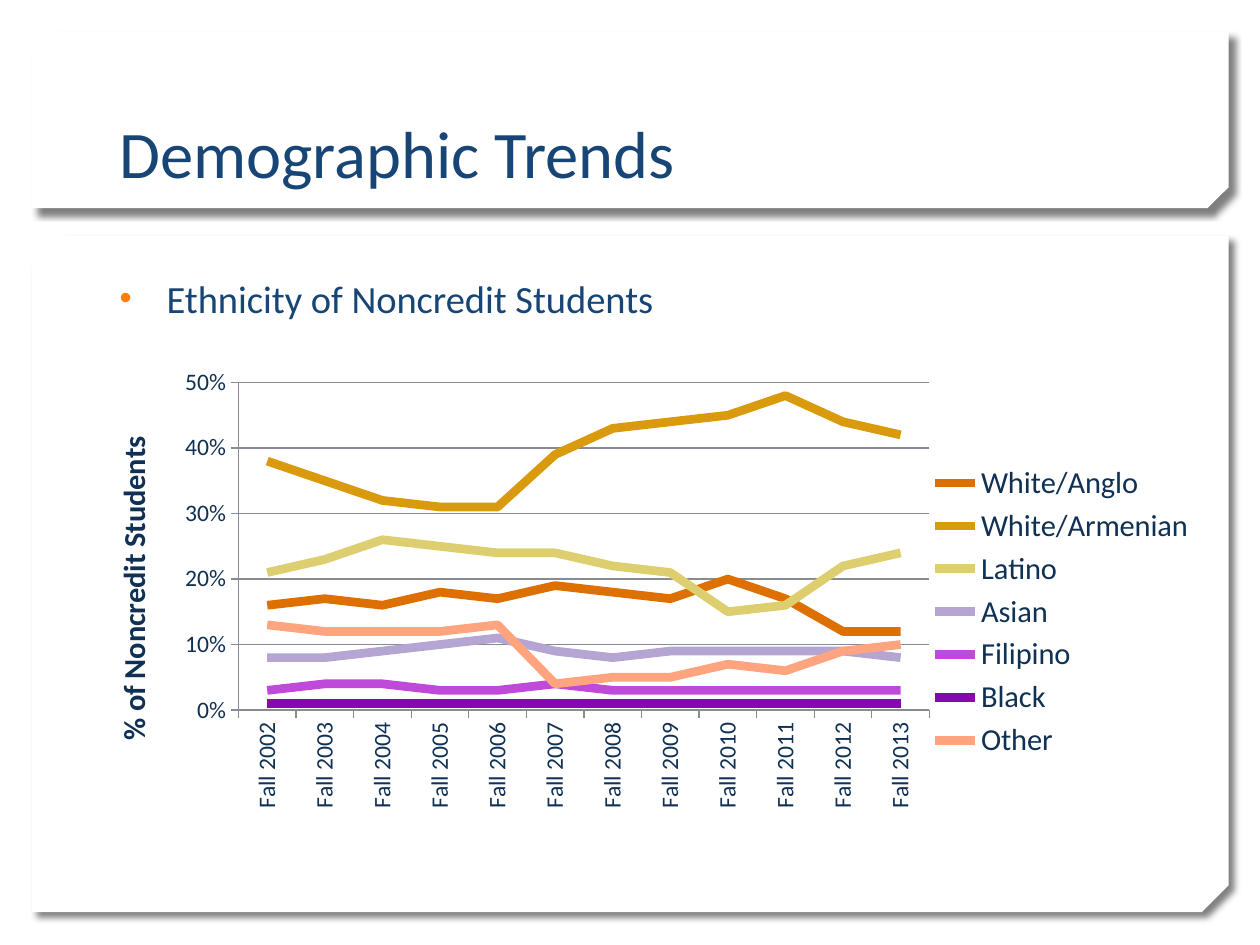
from lxml.etree import SubElement
from pptx import Presentation
from pptx.chart.data import CategoryChartData
from pptx.dml.color import RGBColor
from pptx.enum.chart import XL_CHART_TYPE as ChartType, XL_LEGEND_POSITION as LegendPosition
from pptx.enum.chart import XL_TICK_MARK as TickMark
from pptx.enum.shapes import MSO_SHAPE as Shape
from pptx.enum.text import MSO_ANCHOR as Anchor
from pptx.oxml import parse_xml
from pptx.oxml.ns import nsdecls, qn
from pptx.util import Cm, Pt

FONT = "Calibri"
WHITE = RGBColor(0xFF, 0xFF, 0xFF)
BLUE = RGBColor(0x17, 0x45, 0x76)
NAVY = RGBColor(0x10, 0x31, 0x54)
GRAY = RGBColor(0x87, 0x8B, 0x94)
BULLET_ORANGE = RGBColor(0xFF, 0x7F, 0x01)
ORANGE = RGBColor(0xDD, 0x70, 0x00)
GOLD = RGBColor(0xD9, 0x9B, 0x0D)
YELLOW = RGBColor(0xDD, 0xCF, 0x70)
LILAC = RGBColor(0xB5, 0xA5, 0xD3)
MAGENTA = RGBColor(0xBF, 0x49, 0xD8)
PURPLE = RGBColor(0x85, 0x06, 0xB2)
SALMON = RGBColor(0xFF, 0xA4, 0x7F)

TERMS = [f"Fall {year}" for year in range(2002, 2014)]
GROUPS = [
    ("White/Anglo", ORANGE, [16, 17, 16, 18, 17, 19, 18, 17, 20, 17, 12, 12]),
    ("White/Armenian", GOLD, [38, 35, 32, 31, 31, 39, 43, 44, 45, 48, 44, 42]),
    ("Latino", YELLOW, [21, 23, 26, 25, 24, 24, 22, 21, 15, 16, 22, 24]),
    ("Asian", LILAC, [8, 8, 9, 10, 11, 9, 8, 9, 9, 9, 9, 8]),
    ("Filipino", MAGENTA, [3, 4, 4, 3, 3, 4, 3, 3, 3, 3, 3, 3]),
    ("Black", PURPLE, [1] * 12),
    ("Other", SALMON, [13, 12, 12, 12, 13, 4, 5, 5, 7, 6, 9, 10]),
]
PLOT_LAYOUT = {"x": 0.155, "y": 0.049, "w": 0.602, "h": 0.645}


def style_font(font, size, color, bold=False):
    font.name = FONT
    font.size = Pt(size)
    font.color.rgb = color
    font.bold = bold


def add_panel(page, top, height, snip):
    panel = page.shapes.add_shape(
        Shape.SNIP_2_DIAG_RECTANGLE, Cm(0.64), Cm(top), Cm(24.13), Cm(height))
    panel.adjustments[0] = 0
    panel.adjustments[1] = snip
    panel.fill.solid()
    panel.fill.fore_color.rgb = WHITE
    panel.line.fill.background()
    properties = panel.element.spPr
    properties.find(qn("a:xfrm")).set("flipV", "1")
    properties.append(parse_xml(
        f'<a:effectLst {nsdecls("a")}>'
        f'<a:outerShdw blurRad="{Pt(4)}" dist="{Pt(5)}" dir="2700000" algn="tl" rotWithShape="0">'
        '<a:srgbClr val="000000"><a:alpha val="50000"/></a:srgbClr>'
        '</a:outerShdw></a:effectLst>'))


def add_text(page, top, height, text, size, anchor):
    box = page.shapes.add_textbox(Cm(2.16), Cm(top), Cm(21.06), Cm(height))
    frame = box.text_frame
    frame.word_wrap = True
    frame.vertical_anchor = anchor
    para = frame.paragraphs[0]
    span = para.add_run()
    span.text = text
    style_font(span.font, size, BLUE)
    return para


def add_bullet(para):
    para.space_before = Pt(20)
    properties = para._p.get_or_add_pPr()
    properties.set("marL", str(Cm(0.95)))
    properties.set("indent", str(-Cm(0.95)))
    color = SubElement(properties, qn("a:buClr"))
    SubElement(color, qn("a:srgbClr"), val=str(BULLET_ORANGE))
    SubElement(properties, qn("a:buSzPct"), val="90000")
    SubElement(properties, qn("a:buFont"), typeface="Arial")
    SubElement(properties, qn("a:buChar"), char="•")


def place_plot(chart):
    plot_area = chart.element.find(".//" + qn("c:plotArea"))
    for old_layout in plot_area.findall(qn("c:layout")):
        plot_area.remove(old_layout)
    layout = parse_xml(f'<c:layout {nsdecls("c")}/>')
    plot_area.insert(0, layout)
    manual = SubElement(layout, qn("c:manualLayout"))
    SubElement(manual, qn("c:layoutTarget"), val="inner")
    for side in "xy":
        SubElement(manual, qn(f"c:{side}Mode"), val="edge")
    for key, value in PLOT_LAYOUT.items():
        SubElement(manual, qn(f"c:{key}"), val=str(value))


def style_axis(axis):
    axis.major_tick_mark = TickMark.OUTSIDE
    axis.minor_tick_mark = TickMark.NONE
    axis.format.line.color.rgb = GRAY
    style_font(axis.tick_labels.font, 13.5, NAVY)


def style_value_axis(axis):
    style_axis(axis)
    axis.minimum_scale = 0
    axis.maximum_scale = 0.5
    axis.major_unit = 0.1
    axis.tick_labels.number_format = "0%"
    axis.tick_labels.number_format_is_linked = False
    axis.has_major_gridlines = True
    axis.major_gridlines.format.line.color.rgb = GRAY
    span = axis.axis_title.text_frame.paragraphs[0].add_run()
    span.text = "% of Noncredit Students"
    style_font(span.font, 17.4, NAVY, bold=True)


def style_category_axis(axis):
    style_axis(axis)
    body = axis._element.find(qn("c:txPr")).find(qn("a:bodyPr"))
    body.set("rot", "-5400000")
    body.set("vert", "horz")


def add_trend_chart(page):
    data = CategoryChartData(number_format="0%")
    data.categories = TERMS
    for name, _, percents in GROUPS:
        data.add_series(name, [percent / 100 for percent in percents])
    chart = page.shapes.add_chart(
        ChartType.LINE, Cm(1.22), Cm(7.21), Cm(23.14), Cm(10.24), data).chart
    style_font(chart.font, 17.4, NAVY)
    chart.has_title = False
    chart.has_legend = True
    chart.legend.position = LegendPosition.RIGHT
    chart.legend.include_in_layout = False
    style_font(chart.legend.font, 17.4, NAVY)
    plot = chart.plots[0]
    plot.vary_by_categories = False
    for series, (_, color, _) in zip(plot.series, GROUPS):
        series.smooth = False
        series.format.line.width = Pt(5)
        series.format.line.color.rgb = color
    style_value_axis(chart.value_axis)
    style_category_axis(chart.category_axis)
    place_plot(chart)


def main():
    deck = Presentation()
    deck.slide_width = Cm(25.4)
    deck.slide_height = Cm(19.05)
    page = deck.slides.add_slide(deck.slide_layouts[6])
    add_panel(page, 4.75, 13.64, 0.04)
    add_panel(page, 0.64, 3.56, 0.12)
    add_text(page, 0.81, 3.18, "Demographic Trends", 38, Anchor.BOTTOM)
    add_bullet(add_text(page, 5.41, 11.13, "Ethnicity of Noncredit Students", 22, Anchor.TOP))
    add_trend_chart(page)
    deck.save("out.pptx")


if __name__ == "__main__":
    main()
